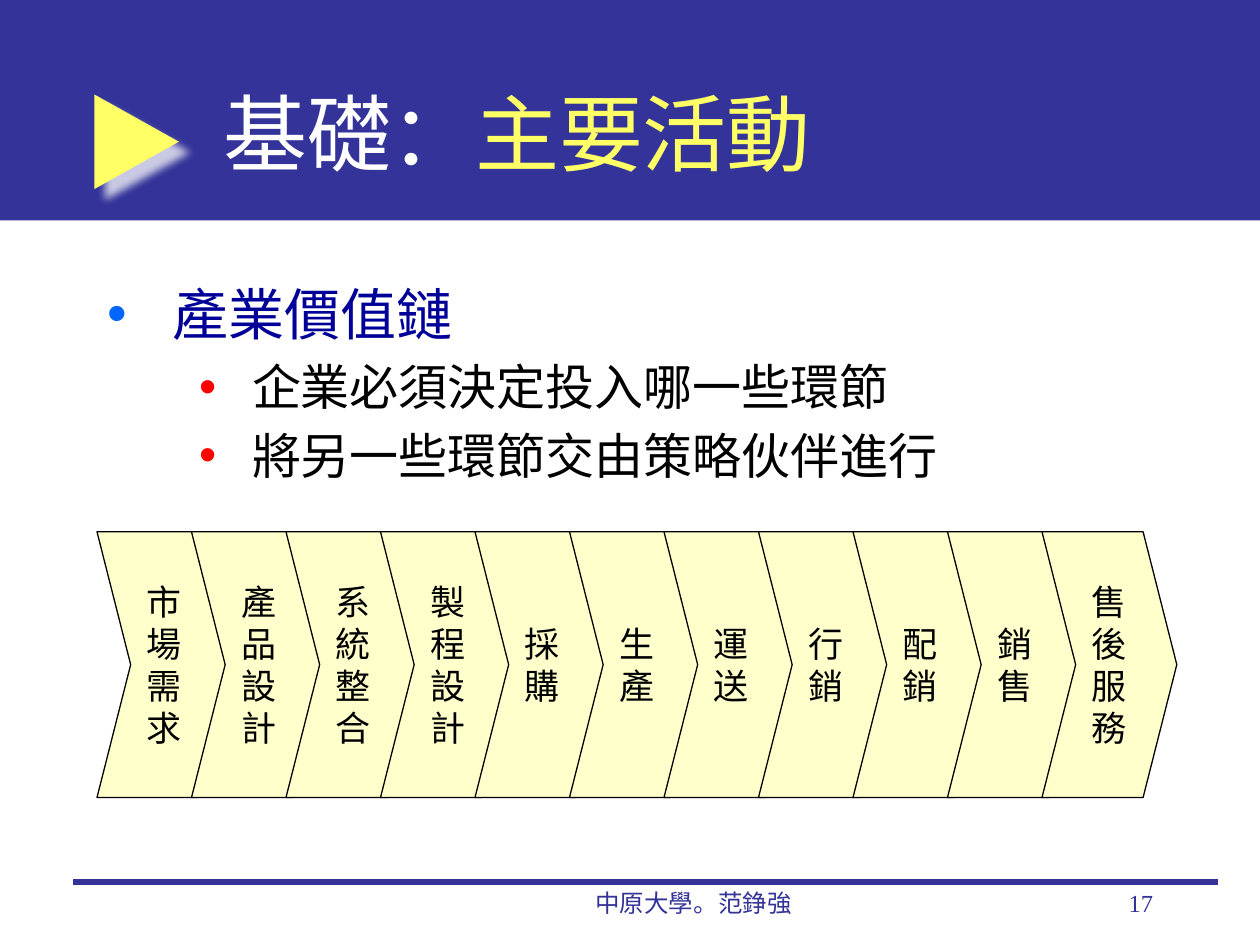
import dataclasses

import pptx
import pptx.dml.color
import pptx.enum.shapes
import pptx.enum.text
import pptx.oxml
import pptx.oxml.ns
import pptx.util
from pptx.util import Inches

SHAPE = pptx.enum.shapes.MSO_SHAPE
ALIGN = pptx.enum.text.PP_ALIGN
ANCHOR = pptx.enum.text.MSO_ANCHOR


@dataclasses.dataclass(frozen=True)
class Theme:
    navy: str = "333399"
    yellow: str = "FFFF66"
    cream: str = "FFFFCC"
    white: str = "FFFFFF"
    black: str = "000000"
    blue: str = "000099"
    dot: str = "0066FF"
    red: str = "FF0000"
    serif: str = "Times New Roman"
    sans: str = "Arial"
    cjk: str = "Noto Sans CJK SC"
    head: int = 48
    lead: int = 32
    item: int = 28
    step: int = 20
    foot: int = 14


THEME = Theme()
STEPS = ["市場需求", "產品設計", "系統整合", "製程設計", "採購", "生產",
         "運送", "行銷", "配銷", "銷售", "售後服務"]


def rgb(code):
    return pptx.dml.color.RGBColor.from_string(code)


def node(xml):
    space = pptx.oxml.ns.nsdecls("a")
    return pptx.oxml.parse_xml(xml.replace("/>", f" {space}/>", 1)
                               if xml.count("<") == 1
                               else xml.replace(">", f" {space}>", 1))


def write(para, text, size, color, font=THEME.serif, align=ALIGN.LEFT):
    """Add text to a paragraph; each newline becomes a line break."""
    para.alignment = align
    for i, line in enumerate(text.split("\n")):
        if i:
            para.add_line_break()
        run = para.add_run()
        run.text = line
        run.font.size = pptx.util.Pt(size)
        run.font.name = font
        run.font.color.rgb = rgb(color)


def place(shape, left, top, width, height):
    shape.left, shape.top = Inches(left), Inches(top)
    shape.width, shape.height = Inches(width), Inches(height)


def draw(slide, kind, box, fill, line=None, adjust=()):
    shape = slide.shapes.add_shape(kind, *map(Inches, box))
    shape.shadow.inherit = False
    shape.fill.solid()
    shape.fill.fore_color.rgb = rgb(fill)
    if line:
        shape.line.color.rgb = rgb(line)
        shape.line.width = pptx.util.Pt(0.75)
    else:
        shape.line.fill.background()
    for i, value in enumerate(adjust):
        shape.adjustments[i] = value
    return shape


def add_frame(slide):
    """Draw the title band, its arrow and the footer rule."""
    draw(slide, SHAPE.RECTANGLE, (0, 0, 10, 1.75), THEME.navy)
    arrow = draw(slide, SHAPE.RIGHT_ARROW, (0.75, 0.75, 0.67, 0.75),
                 THEME.yellow, adjust=(0.384, 1))
    glow = arrow.element.spPr.find(pptx.oxml.ns.qn("a:effectLst"))
    glow.append(node(
        f'<a:outerShdw blurRad="{pptx.util.Pt(5)}" dist="{pptx.util.Pt(8.5)}"'
        f' dir="2700000" algn="ctr" rotWithShape="0">'
        f'<a:srgbClr val="{THEME.white}"><a:alpha val="75000"/></a:srgbClr>'
        '</a:outerShdw>'))
    rule = slide.shapes.add_connector(
        pptx.enum.shapes.MSO_CONNECTOR.STRAIGHT,
        Inches(0.58), Inches(7), Inches(9.67), Inches(7))
    rule.line.color.rgb = rgb(THEME.navy)
    rule.line.width = pptx.util.Pt(3)
    rule.element.spPr.append(node("<a:effectLst/>"))


def add_note(slide, text, box, align):
    frame = slide.shapes.add_textbox(*map(Inches, box)).text_frame
    frame.word_wrap = True
    write(frame.paragraphs[0], text, THEME.foot, THEME.navy, align=align)


def add_title(slide):
    title = slide.shapes.title
    place(title, 1.67, 0.42, 7.58, 1.25)
    slide.shapes.element.append(title.element)
    frame = title.text_frame
    frame.vertical_anchor = ANCHOR.MIDDLE
    para = frame.paragraphs[0]
    write(para, "基礎：", THEME.head, THEME.white, THEME.cjk)
    write(para, "主要活動", THEME.head, THEME.yellow, THEME.cjk)


def bullet(para, color, left, hang):
    props = para._p.get_or_add_pPr()
    props.set("marL", str(Inches(left)))
    props.set("indent", str(-Inches(hang)))
    props.append(node(f'<a:buClr><a:srgbClr val="{color}"/></a:buClr>'))
    props.append(node('<a:buChar char="•"/>'))


def add_body(slide):
    body = slide.placeholders[1]
    place(body, 0.75, 2.17, 8.5, 4.5)
    slide.shapes.element.append(body.element)
    frame = body.text_frame
    frame.auto_size = pptx.enum.text.MSO_AUTO_SIZE.NONE
    lead = frame.paragraphs[0]
    lead.space_before = pptx.util.Pt(0)
    bullet(lead, THEME.dot, 0.52, 0.52)
    write(lead, "產業價值鏈", THEME.lead, THEME.blue, THEME.sans)
    for text in ("企業必須決定投入哪一些環節", "將另一些環節交由策略伙伴進行"):
        para = frame.add_paragraph()
        para.level = 1
        para.space_before = pptx.util.Pt(0.2 * THEME.item)
        bullet(para, THEME.red, 1.15, 0.42)
        write(para, text, THEME.item, THEME.black)


def add_chain(slide):
    for i, name in enumerate(STEPS):
        box = (0.77 + 0.75 * i, 4.22, 1.07, 2.11)
        step = draw(slide, SHAPE.CHEVRON, box, THEME.cream, THEME.black,
                    (0.25,))
        frame = step.text_frame
        frame.word_wrap = False
        frame.vertical_anchor = ANCHOR.MIDDLE
        write(frame.paragraphs[0], "\n".join(name), THEME.step, THEME.black,
              align=ALIGN.CENTER)


def main():
    deck = pptx.Presentation()
    deck.slide_width, deck.slide_height = Inches(10), Inches(7.5)
    slide = deck.slides.add_slide(deck.slide_layouts[1])
    add_frame(slide)
    add_note(slide, "中原大學。范錚強", (3.92, 7, 3.17, 0.5), ALIGN.CENTER)
    add_note(slide, "17", (7.17, 7, 2.08, 0.5), ALIGN.RIGHT)
    add_title(slide)
    add_body(slide)
    add_chain(slide)
    deck.save("out.pptx")


if __name__ == "__main__":
    main()
